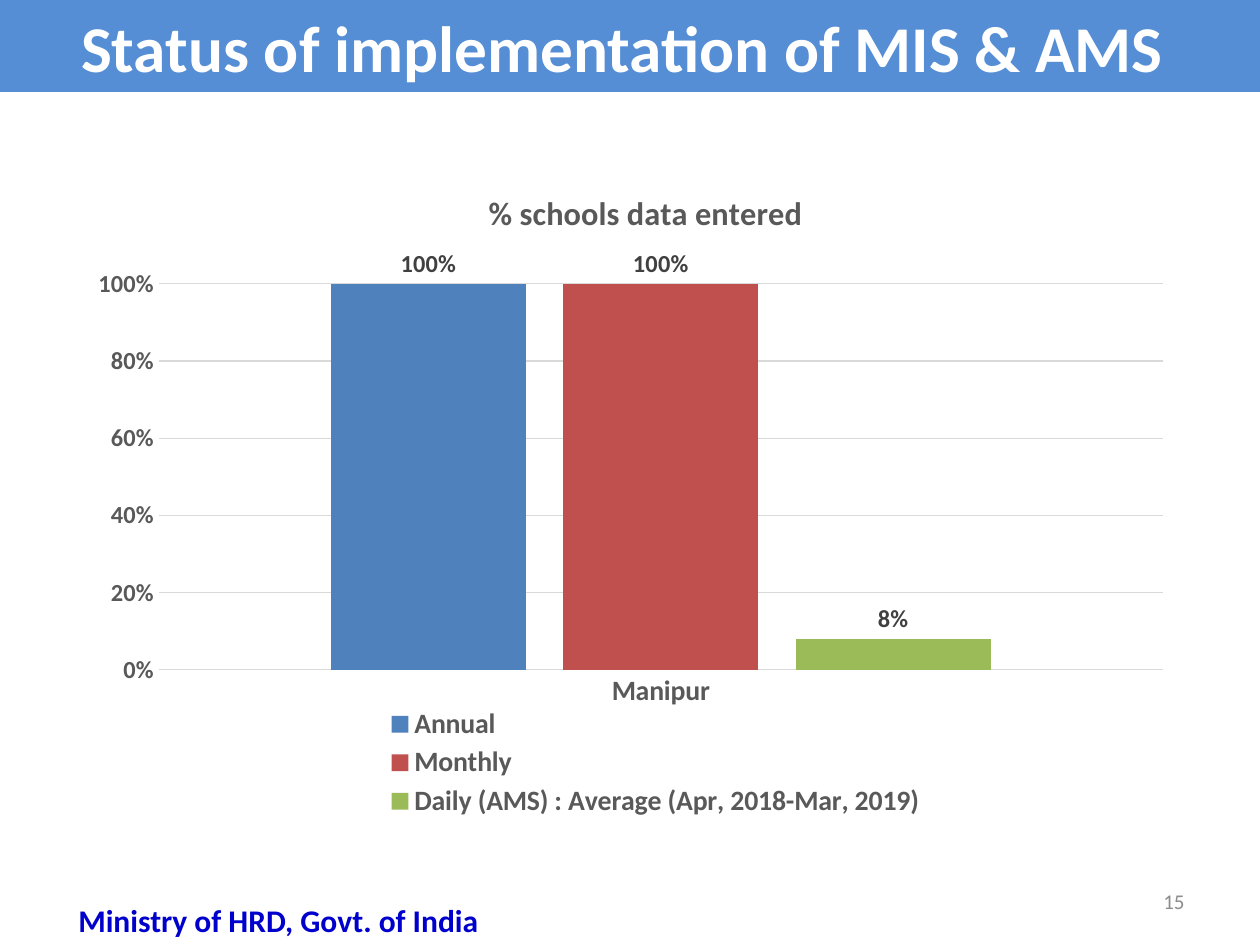
from dataclasses import dataclass

from lxml.etree import SubElement
from pptx import Presentation
from pptx.chart.data import CategoryChartData
from pptx.dml.color import RGBColor
from pptx.enum.chart import XL_CHART_TYPE, XL_LABEL_POSITION, XL_LEGEND_POSITION, XL_TICK_MARK
from pptx.enum.text import MSO_ANCHOR, PP_ALIGN
from pptx.oxml.ns import qn
from pptx.util import Inches, Pt

FONT_NAME = "Calibri"
WHITE = RGBColor(0xFF, 0xFF, 0xFF)
BANNER_BLUE = RGBColor(0x55, 0x8E, 0xD5)
FOOTER_BLUE = RGBColor(0x00, 0x00, 0xCC)
NUMBER_GRAY = RGBColor(0x8C, 0x8C, 0x8C)
TEXT_GRAY = RGBColor(0x59, 0x59, 0x59)
LABEL_GRAY = RGBColor(0x40, 0x40, 0x40)
GRID_GRAY = RGBColor(0xD9, 0xD9, 0xD9)


@dataclass(frozen=True)
class EntrySeries:
    name: str
    share: float
    color: RGBColor


@dataclass(frozen=True)
class Caption:
    text: str
    left: float
    top: float
    width: float
    height: float
    size: float
    color: RGBColor
    bold: bool
    alignment: PP_ALIGN
    anchor: MSO_ANCHOR


ENTRY_SERIES = [
    EntrySeries("Annual", 1, RGBColor(0x4F, 0x81, 0xBD)),
    EntrySeries("Monthly", 1, RGBColor(0xC0, 0x50, 0x4D)),
    EntrySeries("Daily (AMS) : Average (Apr, 2018-Mar, 2019)", 0.08, RGBColor(0x9B, 0xBB, 0x59)),
]
BANNER = Caption("Status of implementation of MIS & AMS ", 0, 0, 10, 0.73, 37.3, WHITE, True,
                 PP_ALIGN.CENTER, MSO_ANCHOR.MIDDLE)
FOOTERS = [
    Caption("15", 7.17, 6.95, 2.33, 0.4, 12, NUMBER_GRAY, False, PP_ALIGN.RIGHT, MSO_ANCHOR.MIDDLE),
    Caption("Ministry of HRD, Govt. of India", 0.25, 7.1, 3.92, 0.4, 18, FOOTER_BLUE, True,
            PP_ALIGN.CENTER, MSO_ANCHOR.TOP),
]


def format_font(font, size: float, color: RGBColor, bold: bool = True) -> None:
    font.name = FONT_NAME
    font.size = Pt(size)
    font.bold = bold
    font.color.rgb = color


def format_line(line) -> None:
    line.color.rgb = GRID_GRAY
    line.width = Pt(0.75)


def fill_caption(shape, caption: Caption) -> None:
    shape.left, shape.top = Inches(caption.left), Inches(caption.top)
    shape.width, shape.height = Inches(caption.width), Inches(caption.height)
    text_frame = shape.text_frame
    text_frame.text = caption.text
    text_frame.word_wrap = True
    text_frame.vertical_anchor = caption.anchor
    paragraph = text_frame.paragraphs[0]
    paragraph.alignment = caption.alignment
    format_font(paragraph.runs[0].font, caption.size, caption.color, caption.bold)


def place_chart_part(element, position: int, inner: bool = False, **fractions: float) -> None:
    for old_layout in element.findall(qn("c:layout")):
        element.remove(old_layout)
    layout = SubElement(element, qn("c:layout"))
    element.insert(position, layout)
    manual_layout = SubElement(layout, qn("c:manualLayout"))
    if inner:
        SubElement(manual_layout, qn("c:layoutTarget")).set("val", "inner")
    for axis in ("x", "y"):
        SubElement(manual_layout, qn(f"c:{axis}Mode")).set("val", "edge")
    for name, fraction in fractions.items():
        SubElement(manual_layout, qn(f"c:{name}")).set("val", str(fraction))


def format_axes(chart) -> None:
    category_axis, value_axis = chart.category_axis, chart.value_axis
    for axis, size in ((category_axis, 16), (value_axis, 14)):
        axis.major_tick_mark = axis.minor_tick_mark = XL_TICK_MARK.NONE
        format_font(axis.tick_labels.font, size, TEXT_GRAY)
    format_line(category_axis.format.line)
    value_axis.format.line.fill.background()
    value_axis.minimum_scale, value_axis.maximum_scale = 0, 1
    value_axis.major_unit = 0.2
    value_axis.tick_labels.number_format = "0%"
    value_axis.tick_labels.number_format_is_linked = False
    format_line(value_axis.major_gridlines.format.line)


def format_series(series, color: RGBColor) -> None:
    series.format.fill.solid()
    series.format.fill.fore_color.rgb = color
    labels = series.data_labels
    labels.show_value = True
    labels.position = XL_LABEL_POSITION.OUTSIDE_END
    labels.number_format = "0%"
    labels.number_format_is_linked = False
    format_font(labels.font, 14, LABEL_GRAY)


def add_entry_chart(slide) -> None:
    chart_data = CategoryChartData(number_format="0%")
    chart_data.categories = ["Manipur"]
    for entry in ENTRY_SERIES:
        chart_data.add_series(entry.name, [entry.share])
    chart = slide.shapes.add_chart(
        XL_CHART_TYPE.COLUMN_CLUSTERED, Inches(0.78), Inches(1.25), Inches(8.62), Inches(5.28), chart_data
    ).chart
    format_font(chart.font, 10, RGBColor(0, 0, 0), False)

    plot = chart.plots[0]
    plot.gap_width, plot.overlap = 176, -19
    plot.vary_by_categories = False
    for series, entry in zip(plot.series, ENTRY_SERIES):
        format_series(series, entry.color)
    format_axes(chart)

    chart.has_title = True
    title = chart.chart_title
    title.text_frame.text = "% schools data entered"
    format_font(title.text_frame.paragraphs[0].runs[0].font, 18.6, TEXT_GRAY)
    title.include_in_layout = False

    chart.has_legend = True
    legend = chart.legend
    legend.position = XL_LEGEND_POSITION.BOTTOM
    legend.include_in_layout = False
    format_font(legend.font, 16, TEXT_GRAY)

    plot_area = chart.element.find(f".//{qn('c:plotArea')}")
    place_chart_part(plot_area, 0, inner=True, x=0.05, y=0.19, w=0.93, h=0.58)
    title_element = chart.element.find(f".//{qn('c:title')}")
    place_chart_part(title_element, 1, x=0.35, y=0.04)
    legend_element = chart.element.find(f".//{qn('c:legend')}")
    place_chart_part(legend_element, 1, x=0.25, y=0.82, w=0.52, h=0.18)


def main() -> None:
    presentation = Presentation()
    presentation.slide_width, presentation.slide_height = Inches(10), Inches(7.5)
    slide = presentation.slides.add_slide(presentation.slide_layouts.get_by_name("Title Only"))
    add_entry_chart(slide)
    title = slide.shapes.title
    title.fill.solid()
    title.fill.fore_color.rgb = BANNER_BLUE
    fill_caption(title, BANNER)
    for footer in FOOTERS:
        fill_caption(slide.shapes.add_textbox(0, 0, 0, 0), footer)
    presentation.save("out.pptx")


if __name__ == "__main__":
    main()
